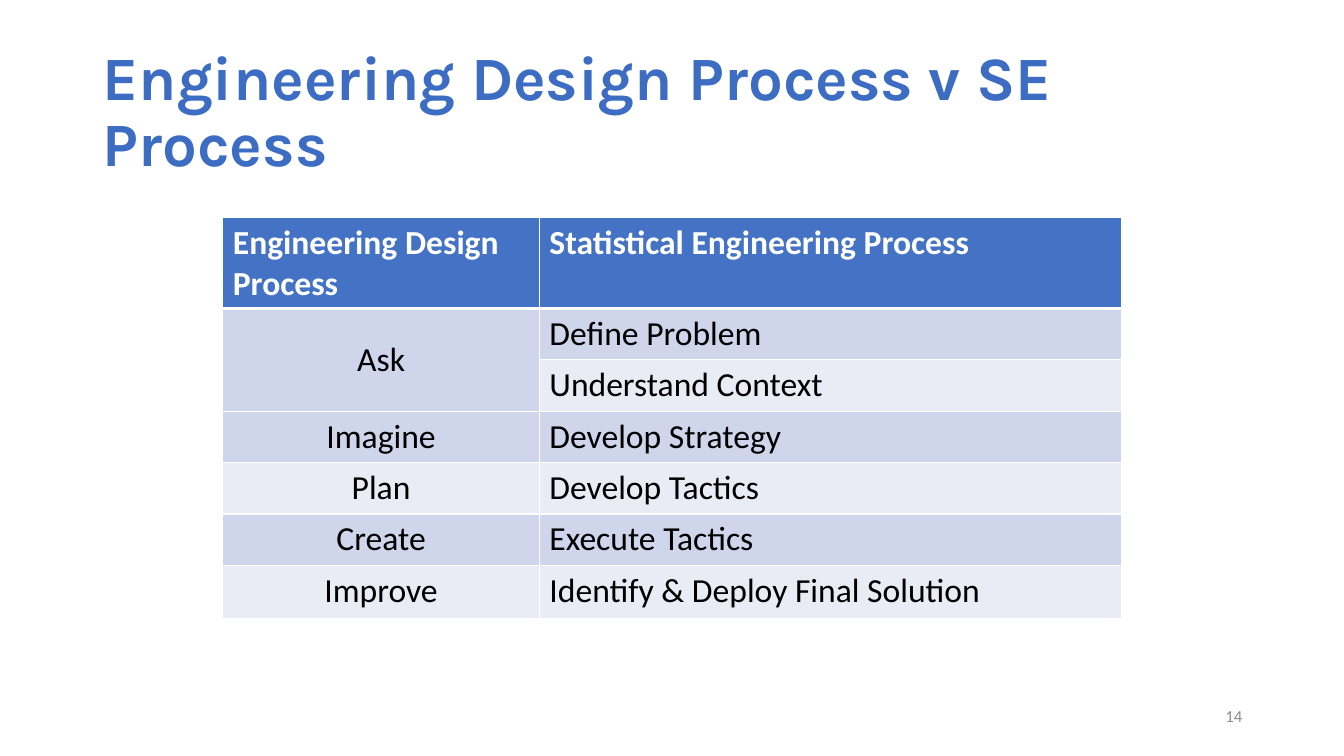
import pptx
import pptx.util
import pptx.dml.color
import pptx.enum.text
import pptx.oxml
import pptx.oxml.ns

Inches = pptx.util.Inches
PP_ALIGN = pptx.enum.text.PP_ALIGN
MIDDLE = pptx.enum.text.MSO_ANCHOR.MIDDLE


def color(value):
    return pptx.dml.color.RGBColor.from_string(value)


def style(paragraph, name, size, value, bold=False, alignment=PP_ALIGN.LEFT):
    paragraph.alignment = alignment
    paragraph.font.name = name
    paragraph.font.size = pptx.util.Pt(size)
    paragraph.font.bold = bold
    paragraph.font.color.rgb = color(value)


presentation = pptx.Presentation()
presentation.slide_width = Inches(13.33)
presentation.slide_height = Inches(7.5)
slide = presentation.slides.add_slide(presentation.slide_layouts[6])

labels = [
    ("Engineering Design Process v SE Process", (0.92, 0.4, 11.5, 1.45),
     "Karla", 44, "3D6DC3", True, PP_ALIGN.LEFT, 0.9),
    ("14", (9.42, 6.9, 3, 0.4),
     "Calibri", 12, "8C8C8C", False, PP_ALIGN.RIGHT, 1.0),
]
for text, box, font, size, value, bold, alignment, line_spacing in labels:
    frame = slide.shapes.add_textbox(*map(Inches, box)).text_frame
    frame.word_wrap = True
    frame.vertical_anchor = MIDDLE
    paragraph = frame.paragraphs[0]
    paragraph.text = text
    paragraph.line_spacing = line_spacing
    style(paragraph, font, size, value, bold, alignment)

steps = [
    ("Engineering Design Process", "Statistical Engineering Process"),
    ("Ask", "Define Problem"),
    ("", "Understand Context"),
    ("Imagine", "Develop Strategy"),
    ("Plan", "Develop Tactics"),
    ("Create", "Execute Tactics"),
    ("Improve", "Identify & Deploy Final Solution"),
]
row_heights = [0.9] + [0.51] * 5 + [0.53]
table = slide.shapes.add_table(
    len(steps), 2, Inches(2.21), Inches(2.16), Inches(8.91), Inches(sum(row_heights))
).table
table.columns[0].width = Inches(3.14)
table.columns[1].width = Inches(5.77)

for row, (names, height) in enumerate(zip(steps, row_heights)):
    table.rows[row].height = Inches(height)
    header = row == 0
    for column, name in enumerate(names):
        cell = table.cell(row, column)
        for side in "LRTB":
            thick = (header and side == "B") or (row == 1 and side == "T")
            width = pptx.util.Pt(3 if thick else 1)
            cell._tc.get_or_add_tcPr().append(pptx.oxml.parse_xml(
                f'<a:ln{side} {pptx.oxml.ns.nsdecls("a")} w="{width}"><a:solidFill>'
                f'<a:srgbClr val="FFFFFF"/></a:solidFill></a:ln{side}>'))
        cell.fill.solid()
        band = "CFD5EA" if row % 2 else "E9EBF5"
        cell.fill.fore_color.rgb = color("4472C4" if header else band)
        paragraph = cell.text_frame.paragraphs[0]
        paragraph.text = name
        centered = column == 0 and not header
        style(paragraph, "Calibri", 24, "FFFFFF" if header else "000000", header,
              PP_ALIGN.CENTER if centered else PP_ALIGN.LEFT)

ask = table.cell(1, 0)
ask.merge(table.cell(2, 0))
ask.vertical_anchor = MIDDLE

presentation.save("out.pptx")
